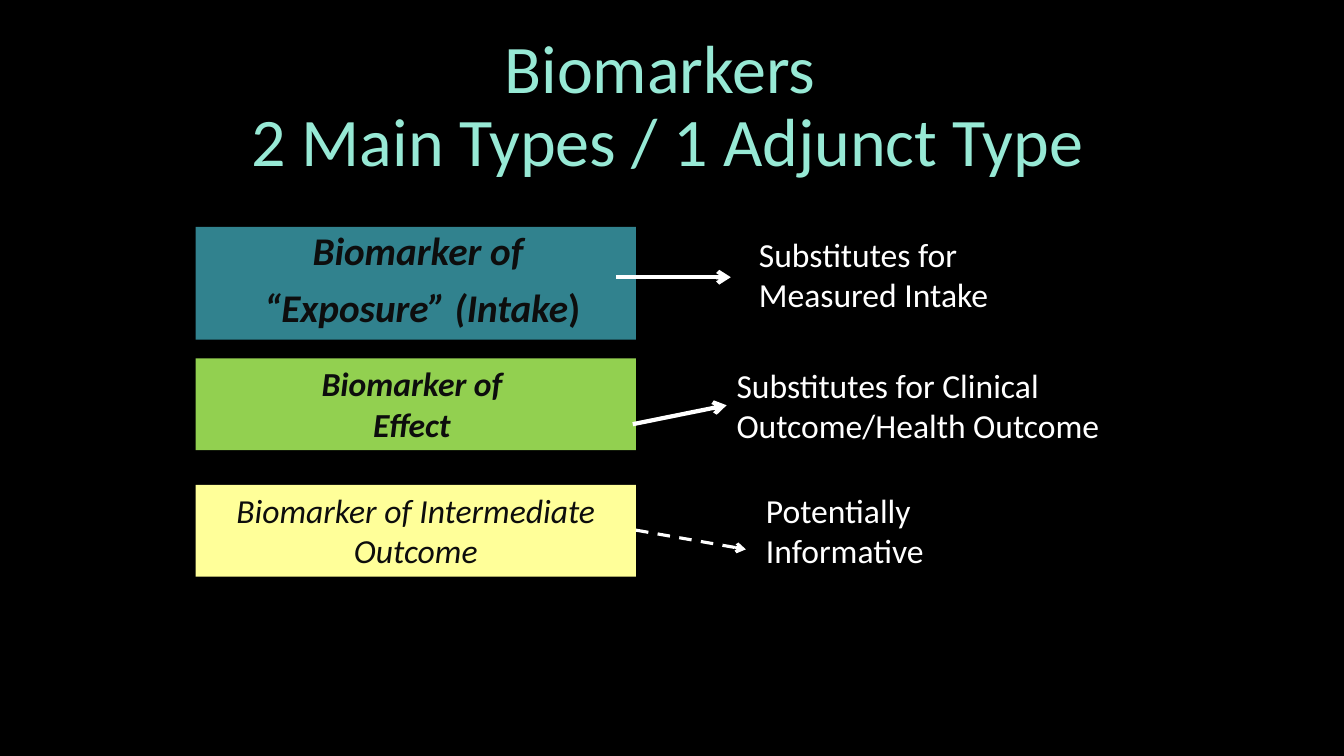
from lxml.etree import SubElement
from pptx import Presentation
from pptx.dml.color import RGBColor
from pptx.enum.dml import MSO_LINE
from pptx.enum.shapes import MSO_CONNECTOR, MSO_SHAPE
from pptx.enum.text import MSO_ANCHOR, MSO_AUTO_SIZE, PP_ALIGN
from pptx.oxml.ns import qn
from pptx.util import Pt

WHITE = "FFFFFF"
INK = "0D0D0D"
BOX_LEFT, BOX_WIDTH, BOX_HEIGHT = 139.7, 314.6, 65.5


def paint(color_format, color):
    """Apply a hex colour to a fill or a line fill."""
    color_format.solid()
    color_format.fore_color.rgb = RGBColor.from_string(color)


def place(sp, left, top, width, height):
    """Set the position and size of a shape in points."""
    sp.left, sp.top, sp.width, sp.height = map(Pt, (left, top, width, height))


def format_runs(p, size, color, bold=False, italic=False):
    """Format every run of a paragraph."""
    for r in p.runs:
        r.font.name = "Calibri"
        r.font.size = Pt(size)
        r.font.bold = bold
        r.font.italic = italic
        paint(r.font.fill, color)


def write(sp, text, size, color, align=PP_ALIGN.LEFT, bold=False, italic=False):
    """Write wrapped text into a shape."""
    tf = sp.text_frame
    tf.text = text
    tf.word_wrap = True
    tf.auto_size = MSO_AUTO_SIZE.NONE
    tf.vertical_anchor = MSO_ANCHOR.TOP
    for p in tf.paragraphs:
        p.alignment = align
        format_runs(p, size, color, bold, italic)
    return tf


def add_title(slide, text):
    """Fill the title placeholder."""
    sp = slide.shapes.title
    place(sp, 66, 39.5, 822, 75)
    tf = write(sp, text, 48.6, "97E9D5", PP_ALIGN.CENTER)
    tf.vertical_anchor = MSO_ANCHOR.MIDDLE
    tf.paragraphs[0].line_spacing = 0.9


def add_exposure_box(slide):
    """Fill the body placeholder with the exposure biomarker."""
    sp = slide.placeholders[1]
    place(sp, BOX_LEFT, 162, BOX_WIDTH, 80.6)
    paint(sp.fill, "31828E")
    tf = write(sp, "Biomarker of \n“Exposure” (Intake", 28, INK, PP_ALIGN.CENTER, True, True)
    first, last = tf.paragraphs
    last.add_run().text = ")"
    format_runs(last, 28, INK, True, True)
    last.runs[-1].font.italic = False
    for p, gap in ((first, 0), (last, 10)):
        p.line_spacing = 0.9
        p.space_before = Pt(gap)
        pPr = p._p.get_or_add_pPr()
        pPr.set("marL", str(Pt(9.4)))
        pPr.set("indent", "0")
        SubElement(pPr, qn("a:buNone"))


def add_box(slide, top, text, fill, bold):
    """Add a filled biomarker box."""
    sp = slide.shapes.add_shape(
        MSO_SHAPE.RECTANGLE, Pt(BOX_LEFT), Pt(top), Pt(BOX_WIDTH), Pt(BOX_HEIGHT))
    sp.shadow.inherit = False
    paint(sp.fill, fill)
    sp.line.fill.background()
    write(sp, text, 24, INK, PP_ALIGN.CENTER, bold, True)


def add_meaning(slide, left, top, width, text):
    """Add the explanation beside a box."""
    sp = slide.shapes.add_textbox(Pt(left), Pt(top), Pt(width), Pt(BOX_HEIGHT))
    write(sp, text, 24, WHITE)


def add_arrow(slide, x1, y1, x2, y2, width=3, dash=None):
    """Add a white arrow between two points."""
    sp = slide.shapes.add_connector(MSO_CONNECTOR.STRAIGHT, Pt(x1), Pt(y1), Pt(x2), Pt(y2))
    paint(sp.line.fill, WHITE)
    sp.line.width = Pt(width)
    if dash:
        sp.line.dash_style = dash
    SubElement(sp.line._get_or_add_ln(), qn("a:tailEnd"), type="arrow")
    SubElement(sp._element.spPr, qn("a:effectLst"))


def main():
    """Build the biomarker slide."""
    prs = Presentation()
    prs.slide_width, prs.slide_height = Pt(960), Pt(540)
    slide = prs.slides.add_slide(prs.slide_layouts[1])
    paint(slide.background.fill, "000000")

    add_title(slide, "Biomarkers \v2 Main Types / 1 Adjunct Type")
    add_exposure_box(slide)
    add_box(slide, 256, "Biomarker of \nEffect ", "92D050", True)
    add_box(slide, 346.3, "Biomarker of Intermediate Outcome", "FFFF99", False)

    add_meaning(slide, 535, 163.5, 259, "Substitutes for Measured Intake")
    add_meaning(slide, 519, 257, 331, "Substitutes for Clinical Outcome/Health Outcome")
    add_meaning(slide, 540, 346.3, 153.4, "Potentially Informative")

    add_arrow(slide, 440, 198, 522, 198)
    add_arrow(slide, 452, 303, 519, 289.5)
    add_arrow(slide, 454.3, 378.7, 532.8, 392.4, 2.25, MSO_LINE.DASH)
    prs.save("out.pptx")


if __name__ == "__main__":
    main()
